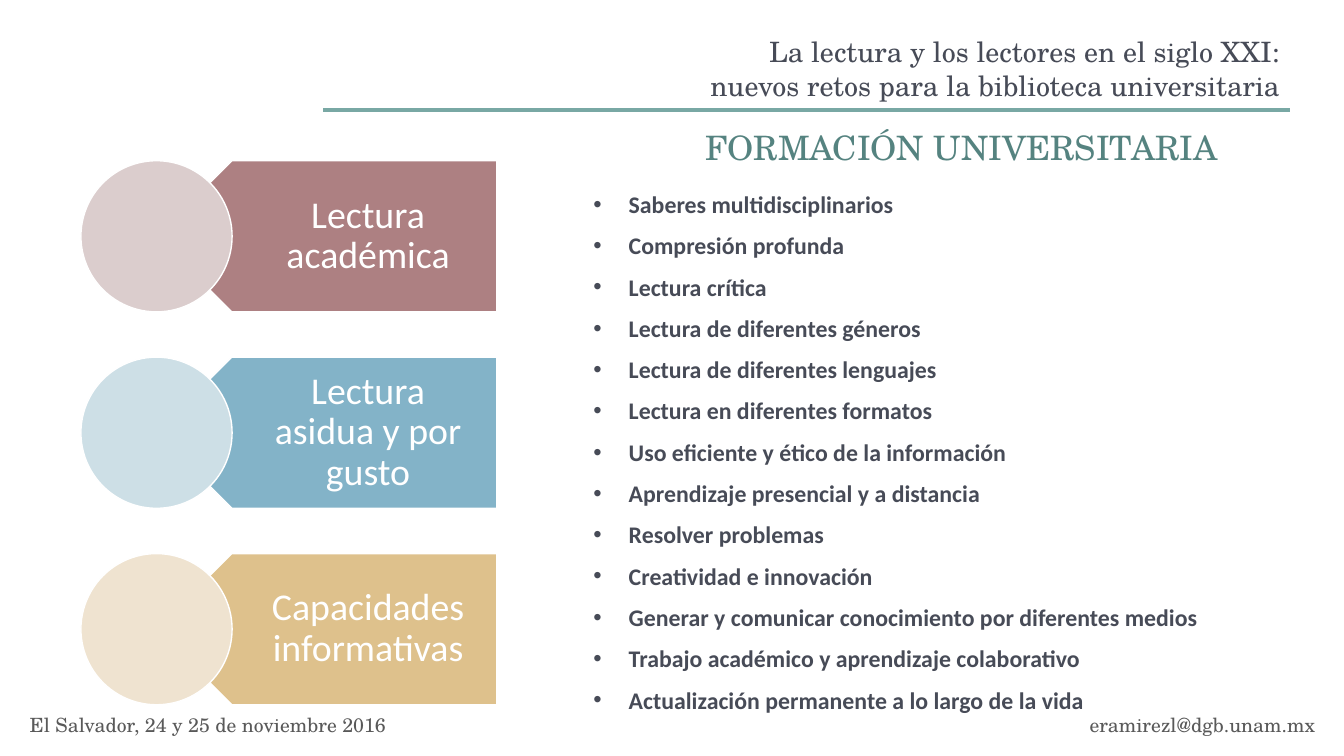
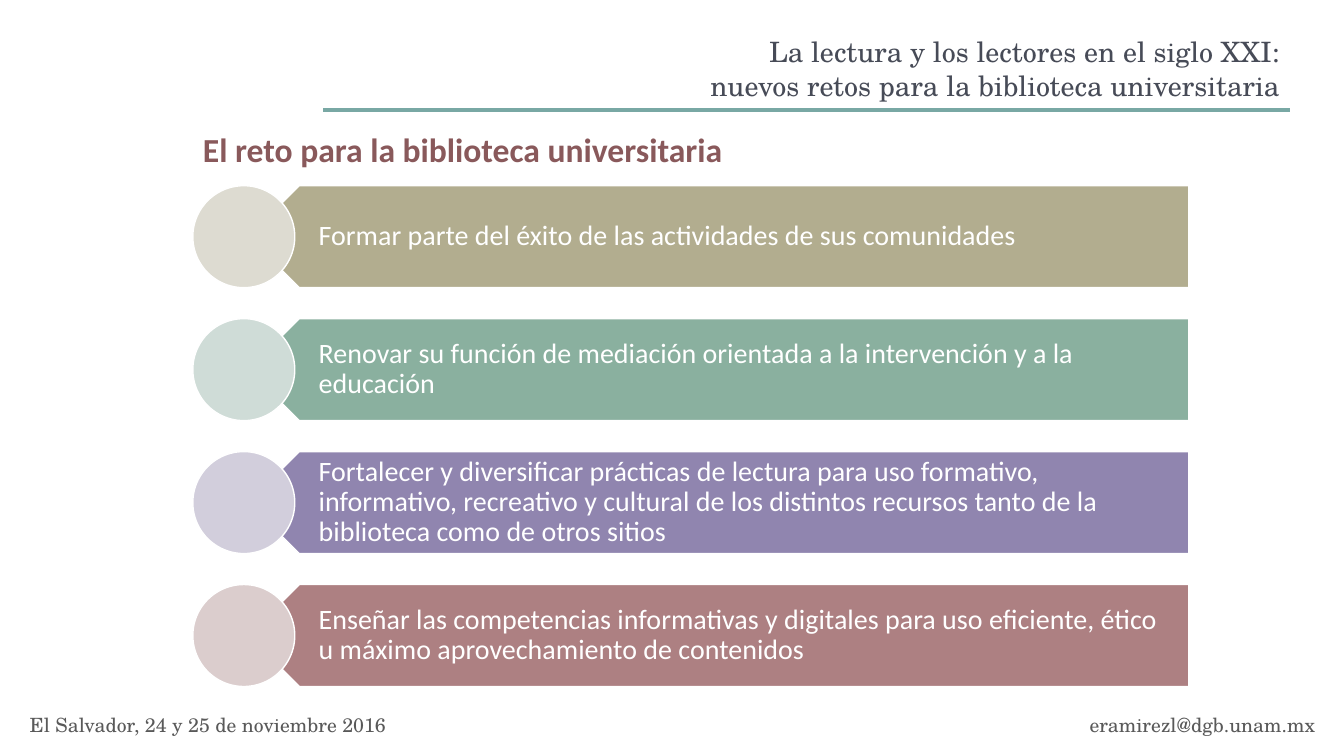
from lxml import etree
from pptx import Presentation, dml, util as u
from pptx.dml import color as colors
from pptx.enum import shapes, text
from pptx.oxml import ns

SERIF, SANS = "TeX Gyre Schola", "Calibri"
INK, TEAL, RULE, WINE, GREY, WHITE = "474B57", "558380", "79A8A4", "89595B", "595959", "FFFFFF"
ROSE, ROSE_TINT = "AD8082", "DBCDCD"

HEADER = "La lectura y los lectores en el siglo XXI:\vnuevos retos para la biblioteca universitaria"
PLACE_AND_DATE = "El Salvador, 24 y 25 de noviembre 2016"
CONTACT = "eramirezl@dgb.unam.mx"

HEADER_FORMAT = {"name": SERIF, "size": u.Pt(20), "color": INK}
FOOTER_FORMAT = {"name": SERIF, "size": u.Pt(14), "color": GREY}
LIST_FORMAT = {"name": SANS, "size": u.Pt(17), "color": INK, "bold": True}

LEFT, CENTER, RIGHT = text.PP_ALIGN.LEFT, text.PP_ALIGN.CENTER, text.PP_ALIGN.RIGHT
TOP, MIDDLE = text.MSO_ANCHOR.TOP, text.MSO_ANCHOR.MIDDLE

SKILLS = [
    "Saberes multidisciplinarios",
    "Compresión profunda",
    "Lectura crítica",
    "Lectura de diferentes géneros",
    "Lectura de diferentes lenguajes",
    "Lectura en diferentes formatos",
    "Uso eficiente y ético de la información",
    "Aprendizaje presencial y a distancia",
    "Resolver problemas",
    "Creatividad e innovación",
    "Generar y comunicar conocimiento por diferentes medios",
    "Trabajo académico y aprendizaje colaborativo",
    "Actualización permanente a lo largo de la vida",
]
READING_BANDS = [
    ("Lectura académica", ROSE, ROSE_TINT),
    ("Lectura asidua y por gusto", "83B3C8", "CDDFE6"),
    ("Capacidades informativas", "DEC18C", "EFE3D0"),
]
CHALLENGE_BANDS = [
    ("Formar parte del éxito de las actividades de sus comunidades", "B2AD8F", "DDDBD1"),
    ("Renovar su función de mediación orientada a la intervención y a la educación",
     "8AB09F", "CFDCD7"),
    ("Fortalecer y diversificar prácticas de lectura para uso formativo, informativo, "
     "recreativo y cultural de los distintos recursos tanto de la biblioteca como de otros sitios",
     "9085AF", "D2CEDC"),
    ("Enseñar las competencias informativas y digitales para uso eficiente, ético "
     "u máximo aprovechamiento de contenidos", ROSE, ROSE_TINT),
]


def rgb(value):
    return colors.RGBColor.from_string(value)


def lengths(*values):
    return [u.Cm(value) for value in values]


def place(shape, box):
    for name, value in zip(("left", "top", "width", "height"), lengths(*box)):
        setattr(shape, name, value)


def write(shape, lines, font_format, align=LEFT, anchor=TOP, line_spacing=1.0):
    """Fill a shape with one paragraph a line and return the paragraphs."""
    frame = shape.text_frame
    frame.text = "\n".join(lines)
    frame.word_wrap = True
    frame.auto_size = text.MSO_AUTO_SIZE.NONE
    frame.vertical_anchor = anchor
    for paragraph in frame.paragraphs:
        paragraph.alignment = align
        paragraph.line_spacing = line_spacing
        paragraph.space_before = u.Pt(0)
        for run in paragraph.runs:
            for name, value in font_format.items():
                if name == "color":
                    run.font.color.rgb = rgb(value)
                else:
                    setattr(run.font, name, value)
    return frame.paragraphs


def add_text(slide, box, line, font_format, **layout):
    write(slide.shapes.add_textbox(*lengths(*box)), [line], font_format, **layout)


def add_frame(slide):
    """Add the running header, its rule and the footer."""
    left, top, width, height = 8.15, 0.79, 24.36, 1.98
    add_text(slide, (left, top, width, height), HEADER, HEADER_FORMAT,
             align=RIGHT, line_spacing=0.99)
    bottom = top + height
    rule = slide.shapes.add_connector(
        shapes.MSO_CONNECTOR.STRAIGHT, *lengths(left, bottom, left + width, bottom))
    rule.line.color.rgb = rgb(RULE)
    rule.line.width = u.Pt(3)
    etree.SubElement(rule._element.spPr, ns.qn("a:effectLst"))
    add_text(slide, (0.5, 17.83, 12, 0.86), PLACE_AND_DATE, FOOTER_FORMAT)
    add_text(slide, (21.4, 17.83, 12, 0.86), CONTACT, FOOTER_FORMAT, align=RIGHT)


def add_title(slide, box, line, font_format, **layout):
    place(slide.shapes.title, box)
    write(slide.shapes.title, [line], {"size": u.Pt(24), **font_format}, **layout)


def add_bullets(placeholder, box, lines):
    place(placeholder, box)
    paragraphs = write(placeholder, lines, LIST_FORMAT)
    indent = u.Cm(0.89)
    for index, paragraph in enumerate(paragraphs):
        properties = paragraph._p.get_or_add_pPr()
        properties.set("marL", str(indent))
        properties.set("indent", str(-indent))
        etree.SubElement(properties, ns.qn("a:buFont")).set("typeface", "Arial")
        etree.SubElement(properties, ns.qn("a:buChar")).set("char", "•")
        if index:
            paragraph.space_before = u.Pt(9.1)


def add_shape(slide, kind, box, fill):
    shape = slide.shapes.add_shape(kind, *lengths(*box))
    shape.shadow.inherit = False
    shape.fill.solid()
    shape.fill.fore_color.rgb = rgb(fill)
    shape.line.color.rgb = rgb(WHITE)
    shape.line.width = u.Pt(1)
    return shape


def add_band(slide, box, tip, band, size, align):
    """Add a left-pointing band, its tip covered by a circle; tip is measured from the box."""
    left, top, width, height = box
    label, fill, tint = band
    plate = add_shape(slide, shapes.MSO_SHAPE.PENTAGON,
                      (left + tip, top, width - tip, height), fill)
    plate._element.spPr.xfrm.set("flipH", "1")
    margins = {"margin_left": u.Cm(0.44 * height), "margin_right": u.Pt(0.56 * size),
               "margin_top": u.Pt(0.3 * size), "margin_bottom": u.Pt(0.3 * size)}
    for name, value in margins.items():
        setattr(plate.text_frame, name, value)
    write(plate, [label], {"name": SANS, "size": u.Pt(size), "color": WHITE},
          align=align, anchor=MIDDLE, line_spacing=0.9)
    add_shape(slide, shapes.MSO_SHAPE.OVAL, (left, top, height, height), tint)


def add_bands(slide, box, pitch, tip, bands, size, align):
    """Stack bands downwards from the box of the first one."""
    left, top, width, height = box
    for index, band in enumerate(bands):
        add_band(slide, (left, top + index * pitch, width, height), tip, band, size, align)


def add_training_slide(presentation):
    slide = presentation.slides.add_slide(presentation.slide_layouts[1])
    add_frame(slide)
    add_title(slide, (16.42, 3.07, 15.62, 1.27), "FORMACIÓN UNIVERSITARIA",
              {"name": SERIF, "color": TEAL}, align=CENTER)
    add_bullets(slide.placeholders[1], (14.7, 4.65, 17.8, 13.6), SKILLS)
    add_bands(slide, (2.04, 4.05, 10.48, 3.81), 4.95, 1.9, READING_BANDS, 27, CENTER)


def add_challenge_slide(presentation):
    slide = presentation.slides.add_slide(presentation.slide_layouts[5])
    add_frame(slide)
    add_title(slide, (4.86, 3.02, 24.36, 1.27), "El reto para la biblioteca universitaria",
              {"name": SANS, "color": WINE, "bold": True}, line_spacing=1.11)
    add_bands(slide, (4.86, 4.68, 25.1, 2.57), 3.35, 1.4, CHALLENGE_BANDS, 20, LEFT)


def main():
    presentation = Presentation()
    presentation.slide_width, presentation.slide_height = lengths(33.87, 19.05)
    add_training_slide(presentation)
    add_challenge_slide(presentation)
    presentation.save("out.pptx")


if __name__ == "__main__":
    main()
